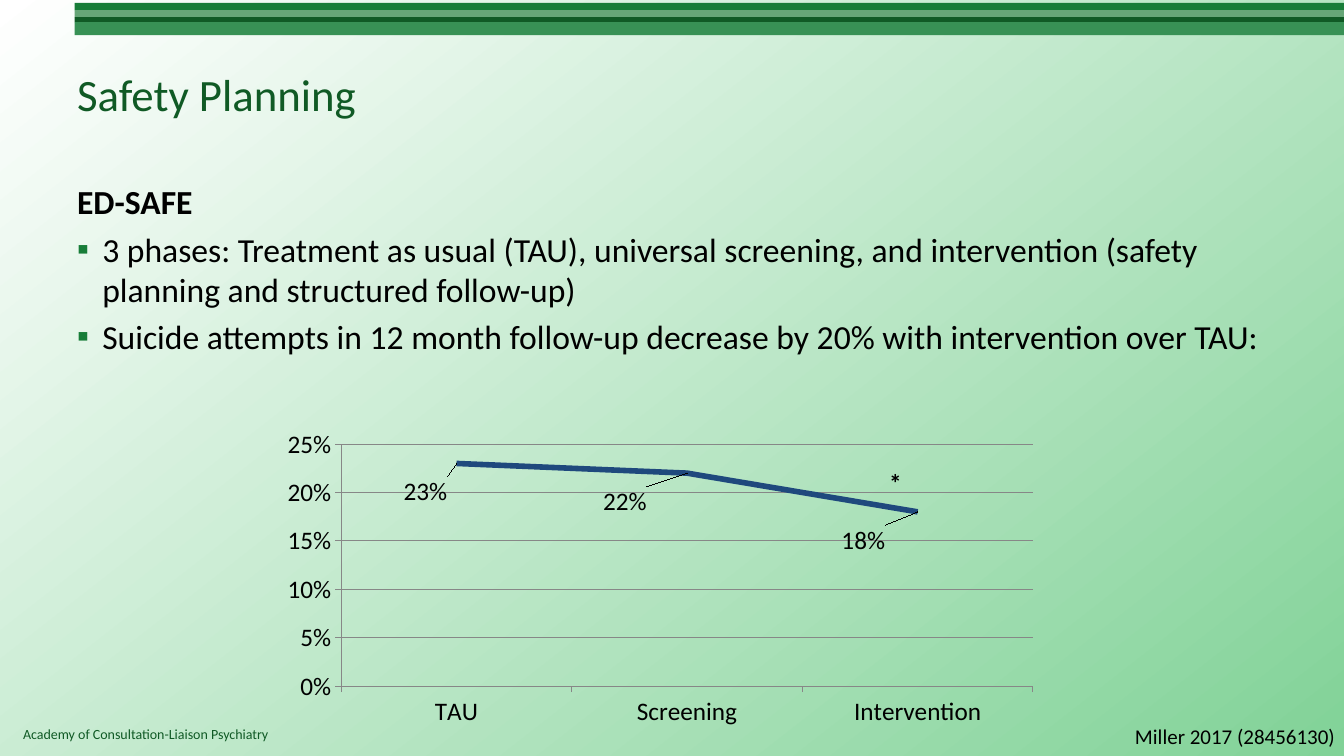
from pptx import Presentation, util as u
from pptx.chart.data import CategoryChartData
from pptx.dml.color import RGBColor
from pptx.enum import chart as ch, shapes, text
from pptx.oxml import parse_xml
from pptx.oxml.ns import nsdecls, qn
from lxml import etree

theme = dict(
    font="Calibri", ink="000000", dark="105A25", mark="177D38",
    line="1F497D", grid="878787", pale="FFFFFF", deep="81D297",
    bars=["177D38", "66A677", "105A25", "389155"],
    title=32, body=24, label=18, cite=15, foot=10,
)
rgb = RGBColor.from_string
W, H = 13.33, 7.5
left, wide = W / 20, W * 0.9

prs = Presentation()
prs.slide_width, prs.slide_height = u.Inches(W), u.Inches(H)
page = prs.slides.add_slide(prs.slide_layouts[6])

back = page.background.fill
back.gradient()
back.gradient_angle = 360 - 52
for stop, hue in zip(back.gradient_stops, (theme["pale"], theme["deep"])):
    stop.color.rgb = rgb(hue)


def write(items, x, y, w, h, size, color=theme["ink"], bold=False,
          align=text.PP_ALIGN.LEFT, anchor=text.MSO_ANCHOR.TOP, mark=None):
    box = page.shapes.add_textbox(*map(u.Inches, (x, y, w, h)))
    frame = box.text_frame
    frame.word_wrap = True
    frame.vertical_anchor = anchor
    for i, item in enumerate(items):
        para = frame.paragraphs[0] if i == 0 else frame.add_paragraph()
        para.alignment = align
        if i:
            para.space_before = u.Pt(size * 0.2)
        if mark and i:
            props = para._p.get_or_add_pPr()
            props.set("marL", str(u.Inches(0.25)))
            props.set("indent", str(-u.Inches(0.25)))
            tint = etree.SubElement(props, qn("a:buClr"))
            etree.SubElement(tint, qn("a:srgbClr"), val=theme["mark"])
            etree.SubElement(props, qn("a:buFont"), typeface=theme["font"])
            etree.SubElement(props, qn("a:buChar"), char=mark)
        run = para.add_run()
        run.text = item
        font = run.font
        font.name, font.size = theme["font"], u.Pt(size)
        font.bold = bold and i == 0
        font.color.rgb = rgb(color)


def place(node, at, **spots):
    old = node.find(qn("c:layout"))
    if old is not None:
        node.remove(old)
    parts = "".join(f'<c:{k} val="{v}"/>' for k, v in spots.items())
    node.insert(at, parse_xml(
        f'<c:layout {nsdecls("c")}><c:manualLayout>{parts}</c:manualLayout></c:layout>'))


edge, top = 0.74, 0.03
for hue, tall in zip(theme["bars"], (0.07, 0.07, 0.05, 0.13)):
    bar = page.shapes.add_shape(
        shapes.MSO_SHAPE.RECTANGLE, *map(u.Inches, (edge, top, W - edge, tall)))
    bar.shadow.inherit = False
    bar.fill.solid()
    bar.fill.fore_color.rgb = rgb(hue)
    bar.line.fill.background()
    top += tall

write(["Academy of Consultation-Liaison Psychiatry"], 0.13, 7.15, 9.25, 0.27,
      theme["foot"], color=theme["dark"])
write(["Safety Planning"], left, 0.3, wide, H / 6, theme["title"],
      color=theme["dark"], anchor=text.MSO_ANCHOR.MIDDLE)
write(["ED-SAFE",
       "3 phases: Treatment as usual (TAU), universal screening, and intervention "
       "(safety planning and structured follow-up)",
       "Suicide attempts in 12 month follow-up decrease by 20% with intervention over TAU:"],
      left, 1.75, wide, H * 0.66, theme["body"], bold=True, mark="▪")

data = CategoryChartData(number_format="0%")
data.categories = ["TAU", "Screening", "Intervention"]
data.add_series("Series 1", (0.23, 0.22, 0.18))
chart = page.shapes.add_chart(
    ch.XL_CHART_TYPE.LINE, *map(u.Inches, (2.69, 4.19, 7.71, 3.08)), data).chart
chart.has_legend = chart.has_title = False
chart.font.name, chart.font.size = theme["font"], u.Pt(theme["label"])
chart.font.color.rgb = rgb(theme["ink"])
place(chart._chartSpace.chart.plotArea, 0, layoutTarget="inner", xMode="edge",
      yMode="edge", x=0.09, y=0.07, w=0.89, h=0.78)

rate = chart.value_axis
rate.minimum_scale, rate.maximum_scale, rate.major_unit = 0, 0.25, 0.05
rate.tick_labels.number_format = "0%"
rate.tick_labels.number_format_is_linked = False
rate.has_major_gridlines = True
for axis in (rate, chart.category_axis):
    axis.major_tick_mark = ch.XL_TICK_MARK.OUTSIDE
    axis.minor_tick_mark = ch.XL_TICK_MARK.NONE
for rule in (rate, chart.category_axis, rate.major_gridlines):
    rule.format.line.color.rgb = rgb(theme["grid"])
    rule.format.line.width = u.Pt(0.75)

plot = chart.plots[0]
plot.vary_by_categories = False
trend = plot.series[0]
trend.smooth = False
trend.marker.style = ch.XL_MARKER_STYLE.NONE
trend.format.line.color.rgb = rgb(theme["line"])
trend.format.line.width = u.Pt(4)
tags = trend.data_labels
tags.show_value = True
tags.number_format, tags.number_format_is_linked = "0%", False
tags.position = ch.XL_LABEL_POSITION.BELOW
for i, shift in enumerate((-0.04, -0.08, -0.07)):
    trend.points[i].data_label.position = ch.XL_LABEL_POSITION.BELOW
    place(tags._element.findall(qn("c:dLbl"))[i], 1, x=shift, y=0.03)

write(["Miller 2017 (28456130)"], 10.95, 7.13, 2.39, 0.35, theme["cite"],
      align=text.PP_ALIGN.RIGHT)
write(["*"], 8.71, 4.59, 0.34, 0.4, theme["label"], bold=True,
      align=text.PP_ALIGN.CENTER)

prs.save("out.pptx")
